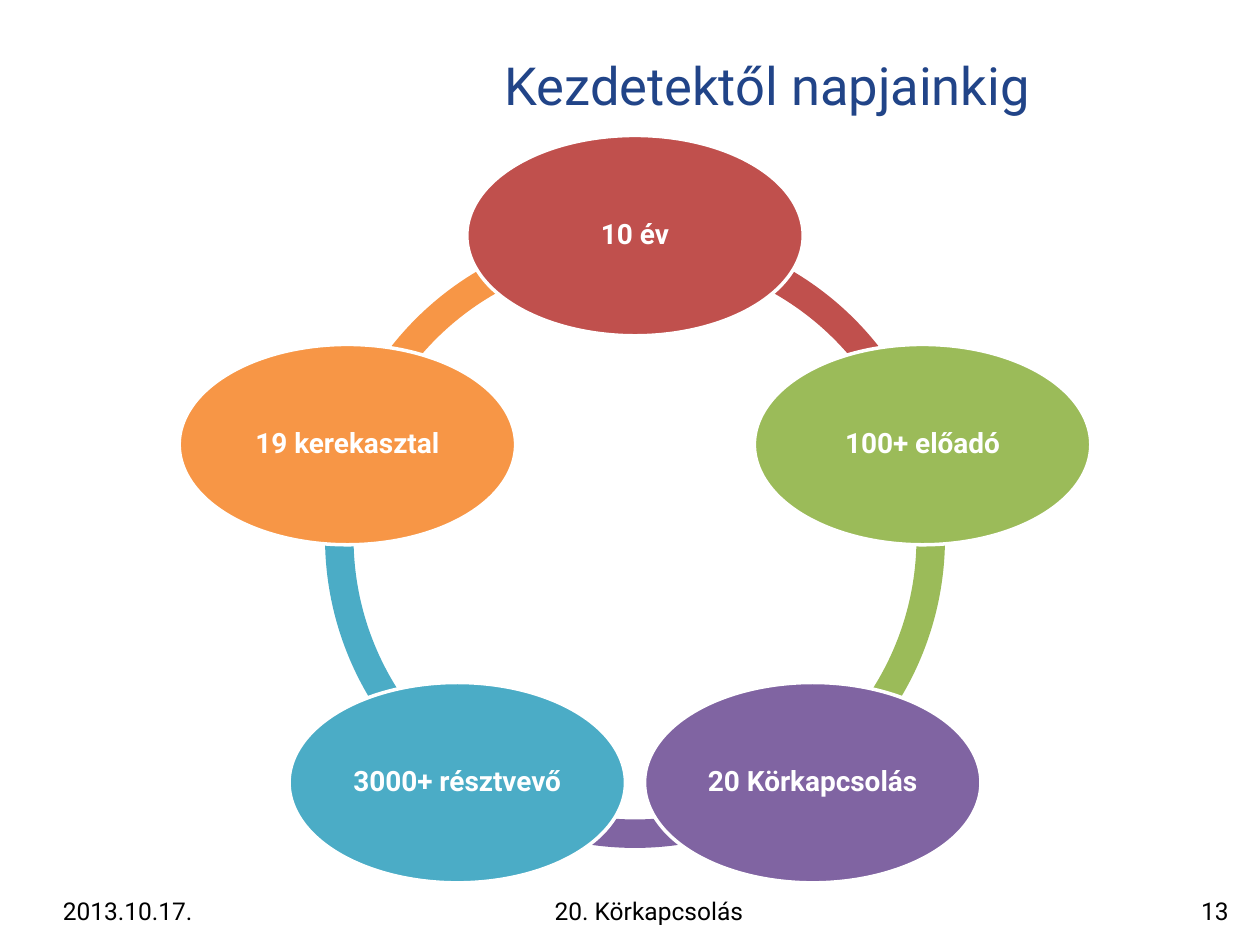
from dataclasses import dataclass
from math import cos, radians, sin

from pptx import Presentation
from pptx.dml.color import RGBColor
from pptx.enum.shapes import MSO_SHAPE
from pptx.enum.text import MSO_ANCHOR, PP_ALIGN
from pptx.util import Inches, Pt

ARC, OVAL = MSO_SHAPE.BLOCK_ARC, MSO_SHAPE.OVAL
LEFT, MID, RIGHT = PP_ALIGN.LEFT, PP_ALIGN.CENTER, PP_ALIGN.RIGHT
TOP, CENTER = MSO_ANCHOR.TOP, MSO_ANCHOR.MIDDLE


@dataclass(frozen=True)
class Theme:
    """Colours, font and type sizes of the slide."""
    face: str = "Roboto"
    navy: str = "214488"
    black: str = "000000"
    white: str = "FFFFFF"
    red: str = "C0504D"
    green: str = "9BBB59"
    violet: str = "8064A2"
    teal: str = "4BACC6"
    orange: str = "F79646"
    head: int = 30
    node: int = 16
    foot: int = 14


THEME = Theme()
NODES = [
    ("10 év", THEME.red),
    ("100+ előadó", THEME.green),
    ("20 Körkapcsolás", THEME.violet),
    ("3000+ résztvevő", THEME.teal),
    ("19 kerekasztal", THEME.orange),
]


def apply(item, values):
    """Set every attribute named in a dict of format values."""
    for name, value in values.items():
        setattr(item, name, value)


def write(shape, text, size, color, align=MID, anchor=TOP, bold=False, inset=None):
    """Put one formatted paragraph into a shape."""
    frame = shape.text_frame
    apply(frame, {"word_wrap": True, "vertical_anchor": anchor})
    if inset is not None:
        sides = ("left", "top", "right", "bottom")
        apply(frame, {f"margin_{side}": Inches(inset) for side in sides})
    para = frame.paragraphs[0]
    para.alignment = align
    run = para.add_run()
    run.text = text
    apply(run.font, {"name": THEME.face, "size": Pt(size), "bold": bold})
    run.font.color.rgb = RGBColor.from_string(color)
    return para


def add_text(slide, box, *args, **style):
    """Add a text box with one paragraph."""
    shape = slide.shapes.add_textbox(*map(Inches, box))
    write(shape, *args, **style)


def add_form(slide, kind, box, color):
    """Add a flat preset shape without outline or shadow."""
    shape = slide.shapes.add_shape(kind, *map(Inches, box))
    shape.shadow.inherit = False
    shape.fill.solid()
    shape.fill.fore_color.rgb = RGBColor.from_string(color)
    shape.line.fill.background()
    return shape


def add_title(slide, box):
    """Place the slide title."""
    add_text(slide, box, "Kezdetektől napjainkig", THEME.head, THEME.navy, anchor=CENTER)


def add_cycle(slide, box):
    """Place the ring of arcs and the ovals spaced evenly along it."""
    left, top, width, height = box
    mid_x, mid_y = left + width / 2, top + height / 2
    reach, wide, high = 2.4, 2.67, 1.59
    step = 360 / len(NODES)
    for i, (_, color) in enumerate(NODES):
        start = 270 + i * step
        arc = add_form(slide, ARC, box, color)
        ends = (start % 360 * 0.6, (start + step) % 360 * 0.6, 0.046)
        for j, value in enumerate(ends):
            arc.adjustments[j] = value
    for i, (text, color) in enumerate(NODES):
        turn = radians(270 + i * step)
        x = mid_x + reach * cos(turn) - wide / 2
        y = mid_y + reach * sin(turn) - high / 2
        oval = add_form(slide, OVAL, (x, y, wide, high), color)
        oval.line.color.rgb = RGBColor.from_string(THEME.white)
        oval.line.width = Pt(2)
        para = write(oval, text, THEME.node, THEME.white,
                     anchor=CENTER, bold=True, inset=0.02)
        para.line_spacing = 0.9


def add_footer(slide, box):
    """Place the date, the event name and the page number."""
    left, top, width, height = box
    parts = [
        ("2013.10.17.", 0, 1.86, LEFT),
        ("20. Körkapcsolás", 1.94, 5.62, MID),
        ("13", width - 1.8, 1.8, RIGHT),
    ]
    for text, shift, wide, align in parts:
        add_text(slide, (left + shift, top, wide, height), text,
                 THEME.foot, THEME.black, align=align)


def main():
    """Build and save the slide."""
    deck = Presentation()
    apply(deck, {"slide_width": Inches(10), "slide_height": Inches(7.5)})
    slide = deck.slides.add_slide(deck.slide_layouts[6])
    add_title(slide, (2.34, 0.16, 7.5, 1.02))
    add_footer(slide, (0.4, 7.06, 9.45, 0.29))
    add_cycle(slide, (2.58, 1.81, 4.92, 4.92))
    deck.save("out.pptx")


if __name__ == "__main__":
    main()
